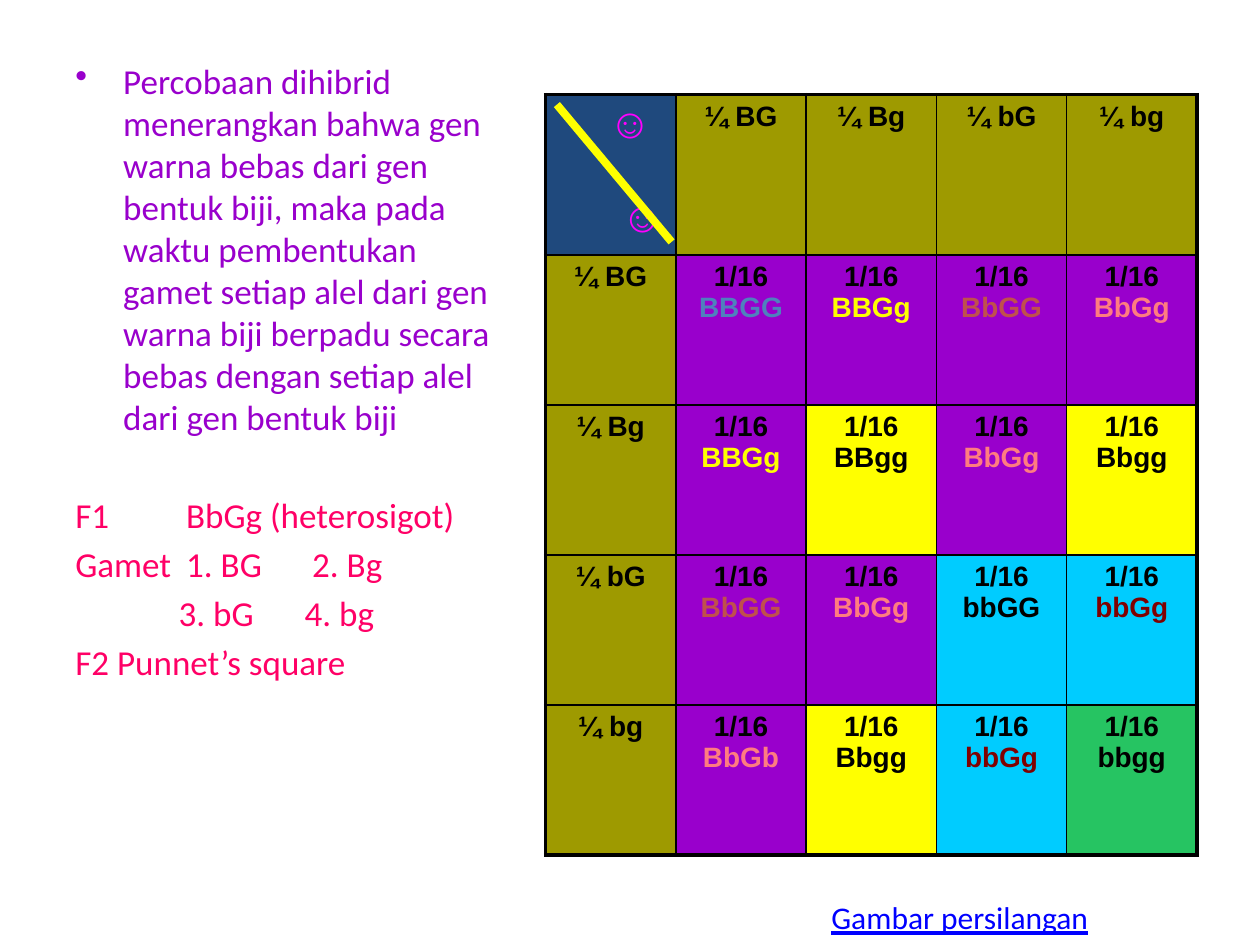
from dataclasses import dataclass

from lxml.etree import SubElement
from pptx import Presentation
from pptx.dml.color import RGBColor
from pptx.enum.shapes import MSO_CONNECTOR
from pptx.enum.text import PP_ALIGN
from pptx.oxml import parse_xml
from pptx.oxml.ns import nsdecls, qn
from pptx.util import Inches, Pt

BLACK = RGBColor(0x00, 0x00, 0x00)
PURPLE = RGBColor(0x99, 0x00, 0xCC)
YELLOW = RGBColor(0xFF, 0xFF, 0x00)
CYAN = RGBColor(0x00, 0xCC, 0xFF)
GREEN = RGBColor(0x26, 0xC4, 0x62)
OLIVE = RGBColor(0x9E, 0x9A, 0x00)
NAVY = RGBColor(0x1F, 0x49, 0x7D)
MAGENTA = RGBColor(0xFF, 0x00, 0xFF)
CRIMSON = RGBColor(0xFF, 0x00, 0x66)
SALMON = RGBColor(0xFF, 0x7C, 0x80)
LINK_BLUE = RGBColor(0x00, 0x00, 0xFF)

GAMETES = ["BG", "Bg", "bG", "bg"]
OFFSPRING = [
    ["BBGG", "BBGg", "BbGG", "BbGg"],
    ["BBGg", "BBgg", "BbGg", "Bbgg"],
    ["BbGG", "BbGg", "bbGG", "bbGg"],
    ["BbGb", "Bbgg", "bbGg", "bbgg"],
]
GENOTYPE_COLORS = {
    "BBGG": RGBColor(0x4F, 0x81, 0xBD),
    "BBGg": YELLOW,
    "BbGG": RGBColor(0xC0, 0x50, 0x4D),
    "BbGg": SALMON,
    "BbGb": SALMON,
    "bbGg": RGBColor(0x80, 0x00, 0x00),
}
# Keyed by presence of a dominant B and a dominant G allele
PHENOTYPE_FILLS = {
    (True, True): PURPLE,
    (True, False): YELLOW,
    (False, True): CYAN,
    (False, False): GREEN,
}
GRID_SIZE = len(GAMETES) + 1


@dataclass
class Note:
    text: str
    color: RGBColor = CRIMSON
    margin: float = 0.38
    hanging: float = 0.38
    space_before: float = 4
    bullet: bool = False


NOTES = [
    Note(
        "Percobaan dihibrid menerangkan bahwa gen warna bebas dari gen bentuk biji, "
        "maka pada waktu pembentukan gamet setiap alel dari gen warna biji berpadu "
        "secara bebas dengan setiap alel dari gen bentuk biji",
        color=PURPLE, space_before=0, bullet=True,
    ),
    Note("F1\t\tBbGg (heterosigot)", space_before=32),
    Note("Gamet \t1. BG\t2. Bg"),
    Note("3. bG\t4. bg", margin=0.82, hanging=0),
    Note("F2 Punnet’s square"),
]


def style_run(run, size: float, color: RGBColor, font: str, bold: bool = False) -> None:
    run.font.size = Pt(size)
    run.font.color.rgb = color
    run.font.name = font
    run.font.bold = bold


def indent(paragraph, margin: float, hanging: float = 0) -> None:
    properties = paragraph._p.get_or_add_pPr()
    properties.set("marL", str(Inches(margin)))
    properties.set("indent", str(-Inches(hanging)))


def add_text_box(slide, left: float, top: float, width: float, height: float):
    box = slide.shapes.add_textbox(Inches(left), Inches(top), Inches(width), Inches(height))
    box.text_frame.word_wrap = True
    return box.text_frame


def add_notes(slide) -> None:
    frame = add_text_box(slide, 0.5, 0.42, 3.67, 6.21)
    frame.text = "\n".join(note.text for note in NOTES)
    for paragraph, note in zip(frame.paragraphs, NOTES):
        indent(paragraph, note.margin, note.hanging)
        if note.bullet:
            SubElement(paragraph._p.pPr, qn("a:buChar")).set("char", "•")
        if note.space_before:
            paragraph.space_before = Pt(note.space_before)
        style_run(paragraph.runs[0], 20, note.color, "Calibri")


def format_cell(cell, fill: RGBColor, row: int, column: int) -> None:
    """Fill a cell and rule it, with a heavier line on the table's outer edge."""
    last = GRID_SIZE - 1
    edges = {"L": column == 0, "R": column == last, "T": row == 0, "B": row == last}
    properties = cell._tc.get_or_add_tcPr()
    for position, (side, is_outer) in enumerate(edges.items()):
        width = Pt(2.25 if is_outer else 1)
        properties.insert(position, parse_xml(
            f'<a:ln{side} {nsdecls("a")} w="{width}"><a:solidFill>'
            f'<a:srgbClr val="{BLACK}"/></a:solidFill></a:ln{side}>'
        ))
    cell.fill.solid()
    cell.fill.fore_color.rgb = fill


def write_parent_symbols(cell) -> None:
    cell.text_frame.text = "☺\n☺"
    mother, father = cell.text_frame.paragraphs
    indent(mother, 0.4)
    indent(father, 0.5)
    father.space_before = Pt(27)
    for paragraph in (mother, father):
        style_run(paragraph.runs[0], 24, MAGENTA, "Arial", bold=True)


def write_gamete(cell, gamete: str) -> None:
    paragraph = cell.text_frame.paragraphs[0]
    paragraph.text = f"¼ {gamete}"
    paragraph.alignment = PP_ALIGN.CENTER
    style_run(paragraph.runs[0], 16, BLACK, "Arial", bold=True)


def write_offspring(cell, genotype: str) -> None:
    paragraph = cell.text_frame.paragraphs[0]
    paragraph.text = "1/16 "
    paragraph.alignment = PP_ALIGN.CENTER
    paragraph.add_run().text = genotype
    for run, color in zip(paragraph.runs, (BLACK, GENOTYPE_COLORS.get(genotype, BLACK))):
        style_run(run, 16, color, "Arial", bold=True)


def add_punnett_square(slide) -> None:
    square = slide.shapes.add_table(
        GRID_SIZE, GRID_SIZE, Inches(4.33), Inches(0.75), Inches(5.17), Inches(5.95)
    ).table
    square.first_row = square.horz_banding = False
    write_parent_symbols(square.cell(0, 0))
    format_cell(square.cell(0, 0), NAVY, 0, 0)
    for index, gamete in enumerate(GAMETES, start=1):
        for row, column in ((0, index), (index, 0)):
            write_gamete(square.cell(row, column), gamete)
            format_cell(square.cell(row, column), OLIVE, row, column)
    for row, genotypes in enumerate(OFFSPRING, start=1):
        for column, genotype in enumerate(genotypes, start=1):
            write_offspring(square.cell(row, column), genotype)
            fill = PHENOTYPE_FILLS["B" in genotype, "G" in genotype]
            format_cell(square.cell(row, column), fill, row, column)


def add_corner_diagonal(slide) -> None:
    diagonal = slide.shapes.add_connector(
        MSO_CONNECTOR.STRAIGHT, Inches(4.42), Inches(0.83), Inches(5.33), Inches(1.92)
    )
    diagonal.line.color.rgb = YELLOW
    diagonal.line.width = Pt(4.5)
    SubElement(diagonal._element.spPr, qn("a:effectLst"))


def add_caption(slide) -> None:
    frame = add_text_box(slide, 6.5, 7.08, 3.08, 0.4)
    frame.text = "Gambar persilangan"
    caption = frame.paragraphs[0].runs[0]
    style_run(caption, 18, LINK_BLUE, "Calibri")
    caption.font.underline = True


def main() -> None:
    presentation = Presentation()
    presentation.slide_width = Inches(10)
    presentation.slide_height = Inches(7.5)
    slide = presentation.slides.add_slide(presentation.slide_layouts[6])
    add_notes(slide)
    add_punnett_square(slide)
    add_corner_diagonal(slide)
    add_caption(slide)
    presentation.save("out.pptx")


if __name__ == "__main__":
    main()
